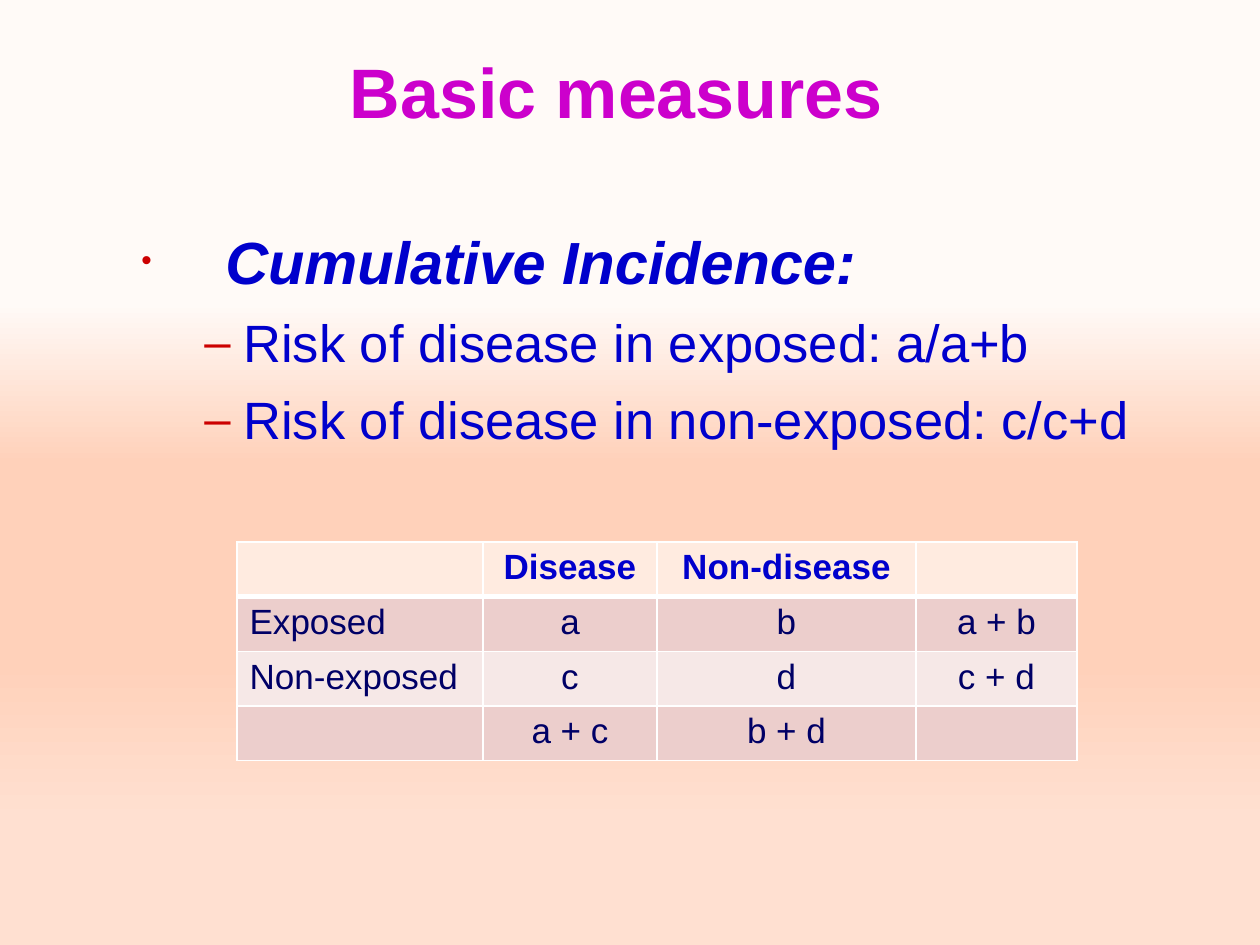
from lxml import etree
from pptx import Presentation
from pptx.dml.color import RGBColor
from pptx.enum.text import MSO_ANCHOR, PP_ALIGN
from pptx.oxml.ns import qn
from pptx.util import Pt

MID = MSO_ANCHOR.MIDDLE
LEFT, CENTER = PP_ALIGN.LEFT, PP_ALIGN.CENTER
HUE = {
    "title": "CC00CC", "text": "0000CC", "cell": "000066", "mark": "CC0000",
    "head": "FFEBE0", "odd": "ECCECC", "even": "F6E8E7", "rule": "FFFFFF",
    "pale": "FFFAF7", "peach": "FFD1BA", "soft": "FFE0D1",
}


def px(n):
    return round(n * 914400 / 126)


def put(para, text, size, hue, bold=False, slant=False):
    run = para.add_run()
    run.text = text
    font = run.font
    font.name, font.size = "Arial", Pt(size)
    font.bold, font.italic = bold, slant
    font.color.rgb = RGBColor.from_string(HUE[hue])


deck = Presentation()
deck.slide_width, deck.slide_height = px(1260), px(945)
slide = deck.slides.add_slide(deck.slide_layouts[6])

fill = slide.background.fill
fill.gradient()
fill.gradient_angle = 270
stops = fill._fill._gradFill.find(qn("a:gsLst"))
for old in list(stops):
    stops.remove(old)
for pos, hue in [(32, "pale"), (49, "peach"), (70, "peach"), (87, "soft")]:
    stop = etree.SubElement(stops, qn("a:gs"), pos=str(pos * 1000))
    etree.SubElement(stop, qn("a:srgbClr"), val=HUE[hue])

title = slide.shapes.add_textbox(px(59), px(77), px(1134), px(110)).text_frame
title.word_wrap = True
title.vertical_anchor = MID
para = title.paragraphs[0]
para.alignment = CENTER
put(para, "Basic measures ", 40, "title", True)
para.add_line_break()
etree.SubElement(para._p[-1], qn("a:rPr"), sz="4000")
etree.SubElement(para._p, qn("a:endParaRPr"), sz="4000")

body = slide.shapes.add_textbox(px(129), px(213), px(1067), px(654)).text_frame
body.word_wrap = True
body.margin_top = px(12)
items = [
    ("Cumulative Incidence:", 34, True, "•", 50, 84, 84),
    ("Risk of disease in exposed: a/a+b", 30, False, "–", 90, 102, 39),
    ("Risk of disease in non-exposed: c/c+d", 30, False, "–", 90, 102, 39),
]
for i, (text, size, strong, mark, pct, left, hang) in enumerate(items):
    para = body.add_paragraph() if i else body.paragraphs[0]
    prop = para._p.get_or_add_pPr()
    prop.set("marL", str(px(left)))
    prop.set("indent", str(-px(hang)))
    tint = etree.SubElement(prop, qn("a:buClr"))
    etree.SubElement(tint, qn("a:srgbClr"), val=HUE["mark"])
    etree.SubElement(prop, qn("a:buSzPct"), val=str(pct * 1000))
    etree.SubElement(prop, qn("a:buFont"), typeface="Arial")
    etree.SubElement(prop, qn("a:buChar"), char=mark)
    if i:
        para.level = 1
        para.space_before = Pt(8)
    put(para, text, size, "text", strong, strong)

rows = [
    ["", "Disease", "Non-disease", ""],
    ["Exposed", "a", "b", "a + b"],
    ["Non-exposed", "c", "d", "c + d"],
    ["", "a + c", "b + d", ""],
]
wide = [246, 174, 259, 161]
grid = slide.shapes.add_table(4, 4, px(237), px(542), px(sum(wide)), px(216)).table
for col, width in zip(grid.columns, wide):
    col.width = px(width)
for r, row in enumerate(rows):
    grid.rows[r].height = px(54)
    for c, text in enumerate(row):
        cell = grid.cell(r, c)
        prop = cell._tc.get_or_add_tcPr()
        for side in "LRTB":
            thick = (side, r) in [("B", 0), ("T", 1)]
            line = etree.SubElement(prop, qn("a:ln" + side), w=str(Pt(3 if thick else 1)))
            paint = etree.SubElement(line, qn("a:solidFill"))
            etree.SubElement(paint, qn("a:srgbClr"), val=HUE["rule"])
        cell.fill.solid()
        shade = "head" if r == 0 else "odd" if r % 2 else "even"
        cell.fill.fore_color.rgb = RGBColor.from_string(HUE[shade])
        para = cell.text_frame.paragraphs[0]
        para.alignment = CENTER if c else LEFT
        if text:
            put(para, text, 20, "cell" if r else "text", r == 0)

deck.save("out.pptx")
